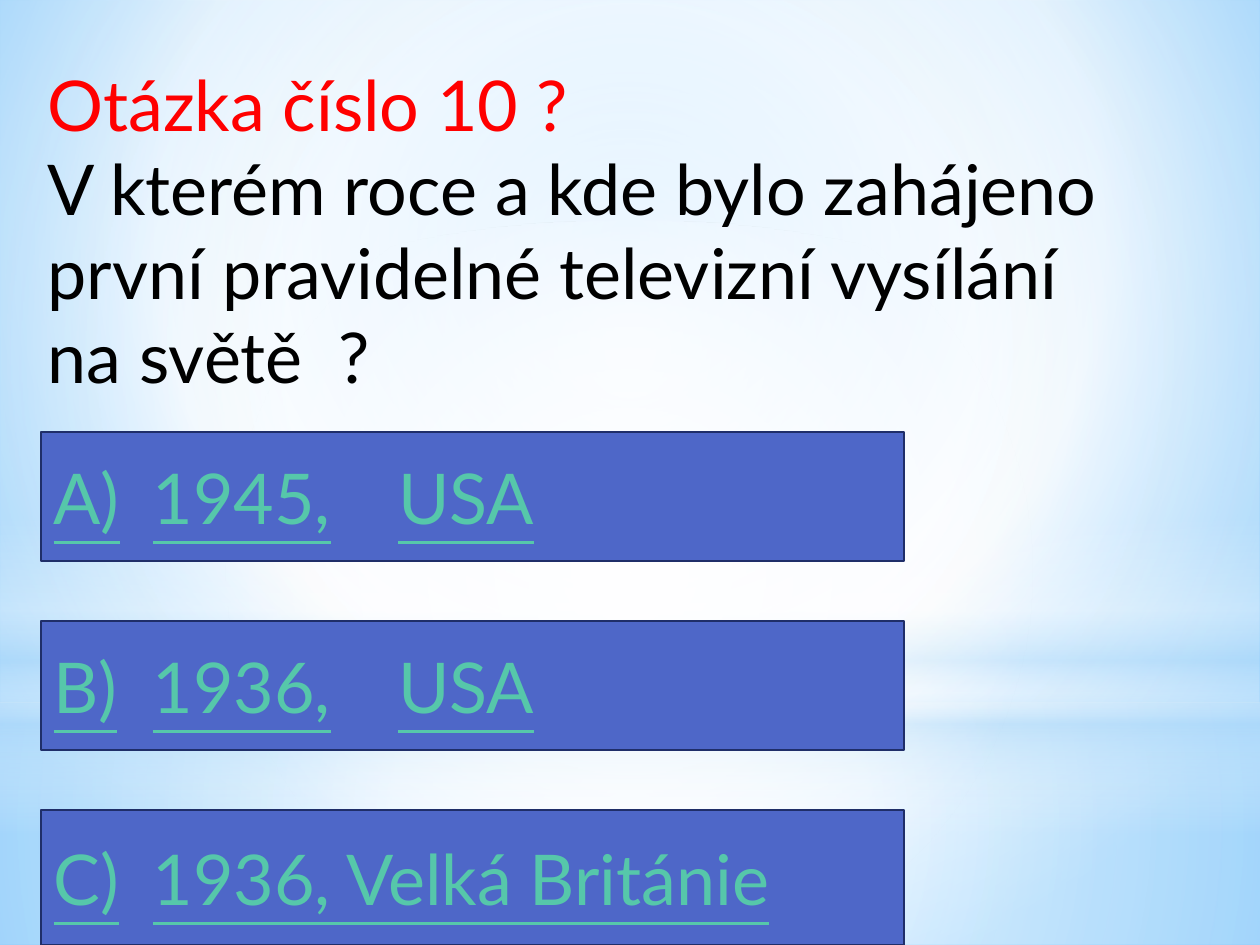
from lxml.etree import SubElement
from pptx import Presentation
from pptx.dml.color import RGBColor
from pptx.enum.shapes import MSO_SHAPE as Preset
from pptx.enum.text import MSO_ANCHOR as Anchor, PP_ALIGN as Align
from pptx.oxml.ns import qn
from pptx.util import Cm, Pt

COLORS = {
    "sky": "9ED5FF", "deep_sky": "5BB9FF", "white": "FFFFFF", "pale": "B4DCFA",
    "box": "4E67C8", "border": "1F2E69", "answer": "56C7AA",
    "heading": "FF0000", "question": "000000",
}
CENTER = (50, 50, 50, 50)


class QuizSlide:
    """Holds the style and the current slide, and adds each kind of element."""

    font_name = "Lato"
    font_size = Pt(40)

    def __init__(self, slide):
        self.slide = slide

    def color(self, name):
        return RGBColor.from_string(COLORS[name])

    def gradient(self, fill, owner, stops, focus=None):
        fill.gradient()
        gradient = next(owner.iter(qn("a:gradFill")))
        for child in list(gradient):
            gradient.remove(child)
        stop_list = SubElement(gradient, qn("a:gsLst"))
        for position, name, opacity in stops:
            stop = SubElement(stop_list, qn("a:gs"), pos=str(position * 1000))
            color = SubElement(stop, qn("a:srgbClr"), val=COLORS[name])
            if opacity < 100:
                SubElement(color, qn("a:alpha"), val=str(opacity * 1000))
        if focus:
            path = SubElement(gradient, qn("a:path"), path="circle")
            sides = {side: str(value * 1000) for side, value in zip("ltrb", focus)}
            SubElement(path, qn("a:fillToRect"), **sides)
        else:
            SubElement(gradient, qn("a:lin"), ang="5400000", scaled="0")

    def background(self, stops, focus):
        self.gradient(self.slide.background.fill, self.slide.element, stops, focus)

    def shape(self, preset, left, top, width, height):
        shape = self.slide.shapes.add_shape(
            preset, Cm(left), Cm(top), Cm(width), Cm(height))
        shape.shadow.inherit = False
        return shape

    def glow(self, preset, top, height, stops, focus=CENTER):
        shape = self.shape(preset, 0, top, 25.4, height)
        self.gradient(shape.fill, shape.element, stops, focus)
        shape.line.fill.background()

    def run(self, paragraph, text, color, underline=None):
        run = paragraph.add_run()
        run.text = text
        run.font.name = self.font_name
        run.font.size = self.font_size
        run.font.underline = underline
        run.font.color.rgb = self.color(color)

    def question(self, left, top, width, height, lines):
        box = self.slide.shapes.add_textbox(Cm(left), Cm(top), Cm(width), Cm(height))
        box.text_frame.word_wrap = True
        paragraph = box.text_frame.paragraphs[0]
        for index, (text, color) in enumerate(lines):
            if index:
                paragraph.add_line_break()
            self.run(paragraph, text, color)

    def answer(self, top, height, text):
        shape = self.shape(Preset.RECTANGLE, 0.83, top, 17.4, height)
        shape.fill.solid()
        shape.fill.fore_color.rgb = self.color("box")
        shape.line.color.rgb = self.color("border")
        shape.line.width = Pt(1.25)
        frame = shape.text_frame
        frame.word_wrap = True
        frame.vertical_anchor = Anchor.MIDDLE
        paragraph = frame.paragraphs[0]
        paragraph.alignment = Align.LEFT
        properties = paragraph._p.get_or_add_pPr()
        tab_list = SubElement(properties, qn("a:tabLst"))
        for position in (Cm(2), Cm(6.95)):
            SubElement(tab_list, qn("a:tab"), pos=str(position), algn="l")
        self.run(paragraph, text, "answer", underline=True)


def main():
    presentation = Presentation()
    presentation.slide_width, presentation.slide_height = Cm(25.4), Cm(19.05)
    quiz = QuizSlide(presentation.slides.add_slide(presentation.slide_layouts[6]))

    quiz.background([(0, "sky", 100), (60, "white", 100), (100, "deep_sky", 100)],
                    (20, 10, 20, 60))
    quiz.glow(Preset.RECTANGLE, 14.17, 4.88,
              [(0, "white", 91), (37, "white", 76), (100, "pale", 79)])
    quiz.glow(Preset.RECTANGLE, 0, 14.17,
              [(0, "white", 89), (48, "white", 62), (100, "pale", 79)])
    quiz.glow(Preset.RECTANGLE, 10.46, 6.35,
              [(0, "white", 0), (29, "white", 30), (45, "pale", 40),
               (55, "white", 26), (65, "pale", 60), (100, "white", 0)], focus=None)
    quiz.glow(Preset.OVAL, 4.45, 14.17, [(0, "white", 100), (56, "white", 0)])

    quiz.question(0.71, 1.12, 24, 10.5, [
        ("Otázka číslo 10 ?", "heading"),
        ("V kterém roce a kde bylo zahájeno první pravidelné televizní vysílání ",
         "question"),
        ("na světě  ?", "question"),
    ])
    answers = [("A)\t1945,\tUSA", 2.6), ("B)\t1936,\tUSA", 2.6),
               ("C)\t1936, Velká Británie", 2.72)]
    for index, (text, height) in enumerate(answers):
        quiz.answer(8.71 + 3.81 * index, height, text)

    presentation.save("out.pptx")


if __name__ == "__main__":
    main()
